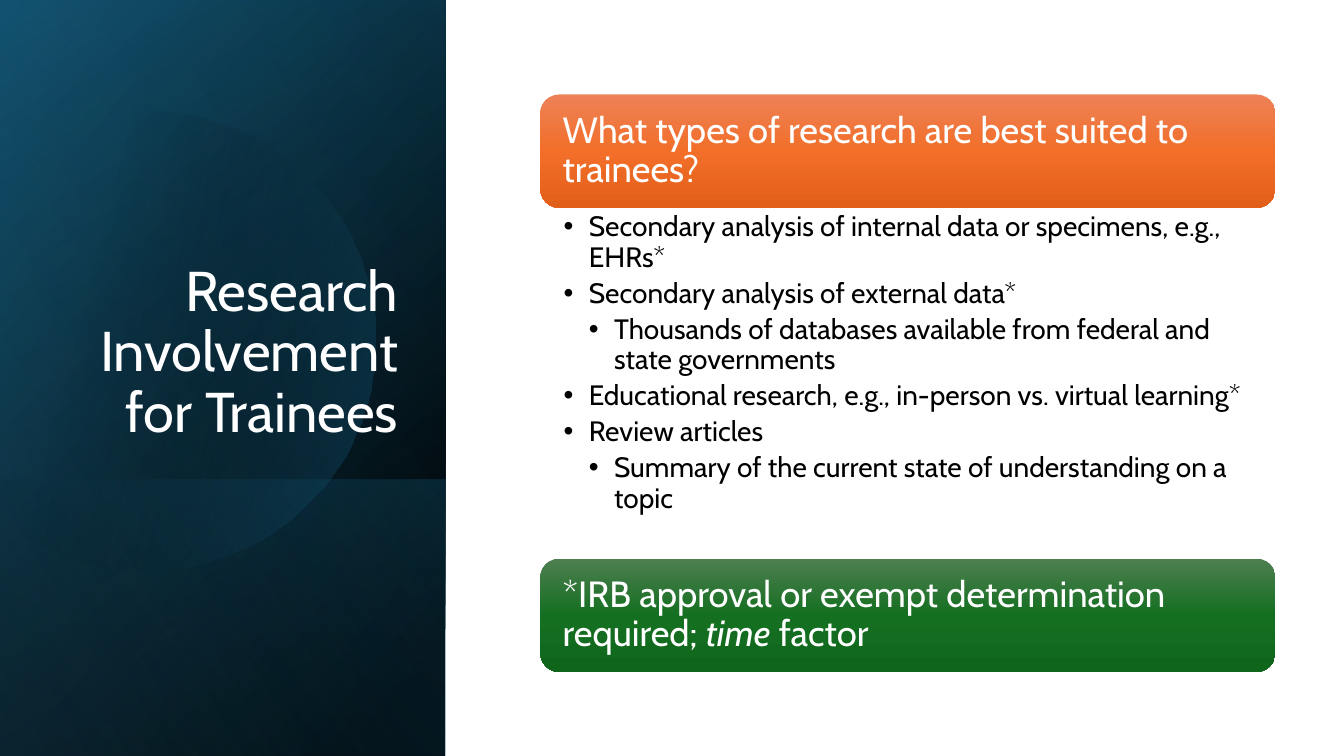
"""Build a slide on research involvement for trainees."""
from math import cos, radians, sin

from pptx import Presentation
from pptx.dml.color import RGBColor
from pptx.enum.shapes import MSO_SHAPE as Shape
from pptx.enum.text import MSO_ANCHOR as Anchor, MSO_AUTO_SIZE as Fit, PP_ALIGN as Align
from pptx.oxml import parse_xml
from pptx.oxml.ns import nsdecls, qn
from pptx.util import Pt

FONT = "Cabin"
SIDE = 318.24
BLACK = RGBColor(0x00, 0x00, 0x00)
WHITE = RGBColor(0xFF, 0xFF, 0xFF)
NAVY = RGBColor(0x10, 0x48, 0x62)
TEAL = RGBColor(0x15, 0x60, 0x82)
SKY = RGBColor(0x46, 0xB1, 0xE1)
ORANGE = [RGBColor(0xED, 0x82, 0x57), RGBColor(0xF2, 0x6E, 0x29), RGBColor(0xE2, 0x5F, 0x1A)]
GREEN = [RGBColor(0x4D, 0x7E, 0x50), RGBColor(0x15, 0x6F, 0x21), RGBColor(0x0F, 0x66, 0x1B)]

PANELS = [
    (0, 540, 50, [(8, BLACK, 100), (100, NAVY, 100)]),
    (0, 540, 30, [(0, BLACK, 0), (99, TEAL, 46)]),
    (342.72, 197.28, 130, [(2, TEAL, 29), (100, BLACK, 30)]),
]
GLOW = (0, 540, 120, [(0, BLACK, 0), (99, SKY, 11)])
ITEMS = [
    (0, "Secondary analysis of internal data or specimens, e.g., EHRs*"),
    (0, "Secondary analysis of external data*"),
    (1, "Thousands of databases available from federal and state governments"),
    (0, "Educational research, e.g., in-person vs. virtual learning*"),
    (0, "Review articles"),
    (1, "Summary of the current state of understanding on a topic"),
]


def shade(shape, stops, angle):
    """Fill a shape with a gradient and drop its line and shadow."""
    shape.shadow.inherit = False
    shape.line.fill.background()
    shape.fill.background()
    marks = "".join(
        f'<a:gs pos="{spot * 1000}"><a:srgbClr val="{color}">'
        f'<a:alpha val="{alpha * 1000}"/></a:srgbClr></a:gs>'
        for spot, color, alpha in stops)
    grad = parse_xml(
        f'<a:gradFill {nsdecls("a")} rotWithShape="1"><a:gsLst>{marks}</a:gsLst>'
        f'<a:lin ang="{angle * 60000}" scaled="0"/></a:gradFill>')
    props = shape._element.spPr
    props.replace(props.find(qn("a:noFill")), grad)


def panel(shapes, top, height, angle, stops):
    """Add a turned and flipped panel on the left side."""
    shift = (height - SIDE) / 2
    shape = shapes.add_shape(Shape.RECTANGLE, Pt(-shift), Pt(top + shift), Pt(height), Pt(SIDE))
    shape.rotation = 90
    shape._element.spPr.find(qn("a:xfrm")).set("flipH", "1")
    shade(shape, stops, angle)


def disc(shapes):
    """Add the large circle that is cut off at the left."""
    points = [(104.5 + 164 * cos(radians(turn)), 243.5 + 164 * sin(radians(turn)))
              for turn in range(-135, 136, 3)]
    pen = shapes.build_freeform(*points[0], scale=Pt(1))
    pen.add_line_segments(points[1:], close=True)
    shade(pen.convert_to_shape(), [(29, BLACK, 0), (100, TEAL, 43)], 14)


def place(shape, left, top, width, height):
    """Move and size a shape."""
    shape.left, shape.top, shape.width, shape.height = map(Pt, (left, top, width, height))


def style(para, size, color, after=0, align=Align.LEFT):
    """Set the font and spacing of a paragraph."""
    para.font.name, para.font.size, para.font.color.rgb = FONT, Pt(size), color
    para.alignment, para.line_spacing = align, 0.9
    para.space_before, para.space_after = Pt(0), Pt(after)


def inset(frame, left, top, right, bottom):
    """Set the inner margins of a wrapped text frame."""
    frame.word_wrap, frame.auto_size = True, Fit.NONE
    frame.margin_left, frame.margin_top = Pt(left), Pt(top)
    frame.margin_right, frame.margin_bottom = Pt(right), Pt(bottom)


def head(slide):
    """Fill the title on top of the panels."""
    title = slide.shapes.title
    slide.shapes._spTree.append(title._element)
    place(title, 46, 132.5, 245.5, 188.6)
    frame = title.text_frame
    frame.text = "Research Involvement for Trainees"
    frame.vertical_anchor = Anchor.BOTTOM
    inset(frame, 7.2, 3.6, 7.2, 3.6)
    style(frame.paragraphs[0], 40, WHITE, align=Align.RIGHT)


def card(shapes, top, colors, parts):
    """Add a rounded card with runs of plain or italic text."""
    shape = shapes.add_shape(Shape.ROUNDED_RECTANGLE, Pt(386), Pt(top), Pt(525), Pt(81))
    shade(shape, [(50 * step, color, 100) for step, color in enumerate(colors)], 90)
    frame = shape.text_frame
    frame.vertical_anchor = Anchor.MIDDLE
    inset(frame, 12, 12, 12, 12)
    para = frame.paragraphs[0]
    style(para, 26, WHITE)
    for text, slant in parts:
        run = para.add_run()
        run.text = text
        if slant:
            run.font.italic = True


def bullets(slide):
    """Fill the body with the two-level list."""
    body = slide.placeholders[1]
    slide.shapes._spTree.append(body._element)
    place(body, 386, 149, 525, 250)
    frame = body.text_frame
    frame.text = "\n".join(text for _, text in ITEMS)
    frame.vertical_anchor = Anchor.TOP
    inset(frame, 16.6, 2.9, 14.4, 2.9)
    for para, (level, _) in zip(frame.paragraphs, ITEMS):
        para.level = level
        style(para, 20, BLACK, after=4.2)
        props = para._p.get_or_add_pPr()
        props.set("marL", str(Pt(18 * (level + 1))))
        props.set("indent", str(Pt(-18)))
        props.append(parse_xml(f'<a:buFont {nsdecls("a")} typeface="Arial"/>'))
        props.append(parse_xml(f'<a:buChar {nsdecls("a")} char="•"/>'))
        rest = props.find(qn("a:defRPr"))
        if rest is not None:
            props.append(rest)


def main():
    """Build and save the slide."""
    deck = Presentation()
    deck.slide_width, deck.slide_height = Pt(960), Pt(540)
    slide = deck.slides.add_slide(deck.slide_layouts[1])
    shapes = slide.shapes
    for item in PANELS:
        panel(shapes, *item)
    disc(shapes)
    panel(shapes, *GLOW)
    head(slide)
    card(shapes, 67.5, ORANGE, [("What types of research are best suited to trainees?", False)])
    bullets(slide)
    card(shapes, 399, GREEN, [("*IRB approval or exempt determination required; ", False),
                              ("time ", True), ("factor", False)])
    deck.save("out.pptx")


if __name__ == "__main__":
    main()
